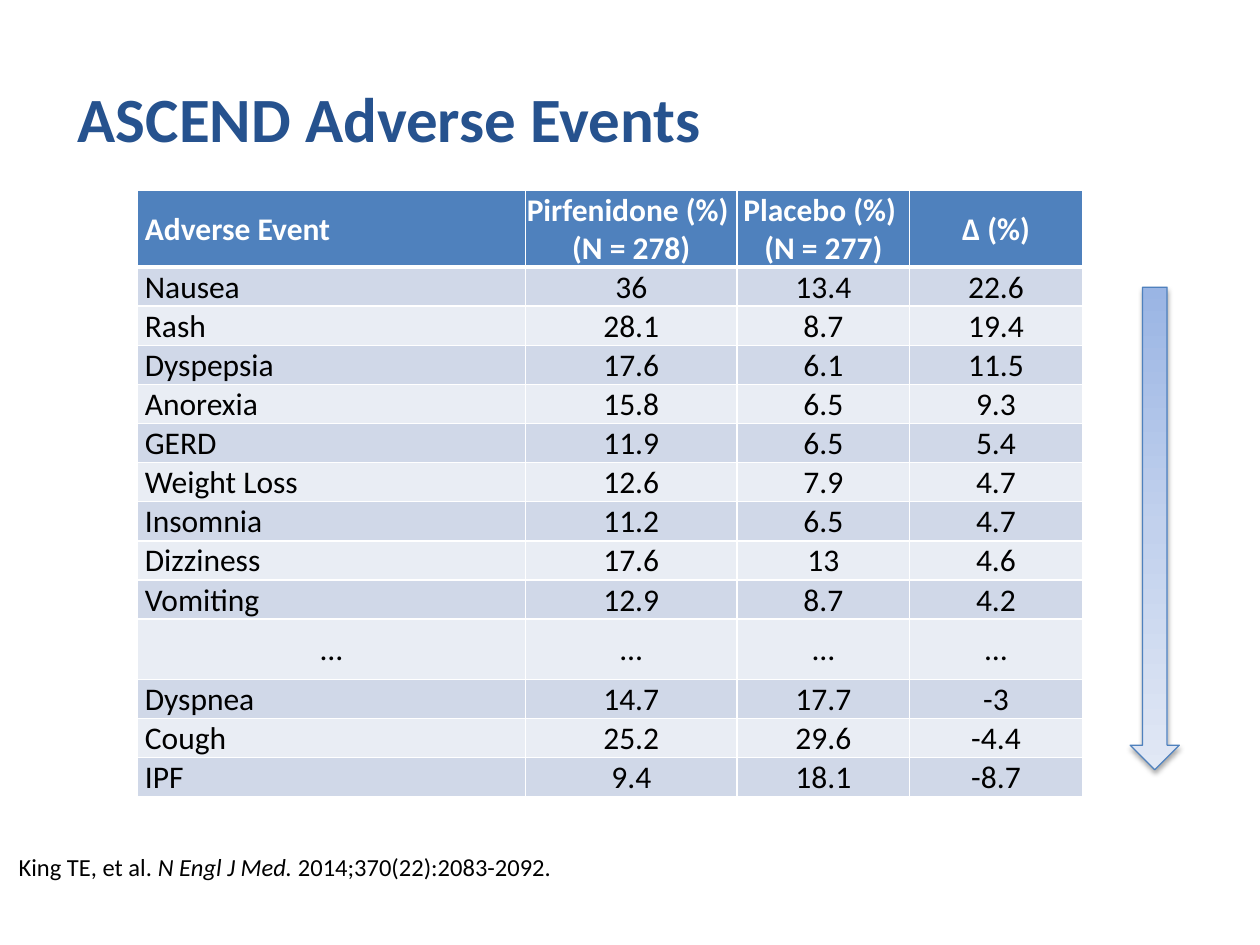
import pptx
import pptx.dml.color
import pptx.enum.shapes
import pptx.enum.text
import pptx.oxml
import pptx.oxml.ns
import pptx.util

ALIGN = pptx.enum.text.PP_ALIGN
ANCHOR = pptx.enum.text.MSO_ANCHOR
COLORS = {
    "title": "26528E", "text": "000000", "white": "FFFFFF", "accent": "4F81BD",
    "odd": "D0D8E8", "even": "E9EDF4",
    "arrow_top": "9AB5E4", "arrow_middle": "C2D1ED", "arrow_bottom": "E1E8F5",
}
HEADINGS = ["Adverse Event", "Pirfenidone (%) \n(N = 278)", "Placebo (%) \n(N = 277)", "Δ (%)"]
EVENTS = [
    ["Nausea", "36", "13.4", "22.6"],
    ["Rash", "28.1", "8.7", "19.4"],
    ["Dyspepsia", "17.6", "6.1", "11.5"],
    ["Anorexia", "15.8", "6.5", "9.3"],
    ["GERD", "11.9", "6.5", "5.4"],
    ["Weight Loss", "12.6", "7.9", "4.7"],
    ["Insomnia", "11.2", "6.5", "4.7"],
    ["Dizziness", "17.6", "13", "4.6"],
    ["Vomiting", "12.9", "8.7", "4.2"],
    ["…"] * 4,
    ["Dyspnea", "14.7", "17.7", "-3"],
    ["Cough", "25.2", "29.6", "-4.4"],
    ["IPF", "9.4", "18.1", "-8.7"],
]


def color(name):
    return pptx.dml.color.RGBColor.from_string(COLORS[name])


def apply(target, values):
    for name, value in values.items():
        setattr(target, name, value)


def element(xml):
    return pptx.oxml.parse_xml(xml.replace(">", f" {pptx.oxml.ns.nsdecls('a')}>", 1))


class SlideBuilder:
    font_name = "Calibri"
    columns, rows = 40, 30

    def __init__(self, presentation):
        self.column = presentation.slide_width / self.columns
        self.row = presentation.slide_height / self.rows
        self.slide = presentation.slides.add_slide(presentation.slide_layouts[6])

    def place(self, left, top, width, height):
        return [int(left * self.column), int(top * self.row),
                int(width * self.column), int(height * self.row)]

    def style(self, font, size, color_name, **values):
        apply(font, {"name": self.font_name, "size": pptx.util.Pt(size), **values})
        font.color.rgb = color(color_name)

    def text(self, place, runs, size, color_name, frame_values, **font_values):
        frame = self.slide.shapes.add_textbox(*self.place(*place)).text_frame
        apply(frame, {"word_wrap": True, **frame_values})
        for words, italic in runs:
            run = frame.paragraphs[0].add_run()
            run.text = words
            self.style(run.font, size, color_name, italic=italic, **font_values)

    def border(self, cell, side, width):
        cell._tc.get_or_add_tcPr().append(element(
            f'<a:{side} w="{int(pptx.util.Pt(width))}"><a:solidFill>'
            f'<a:srgbClr val="{COLORS["white"]}"/></a:solidFill></a:{side}>'))

    def cell(self, cell, words, row, column):
        header, gap = row == 0, words == "…"
        label = column == 0 and not gap
        middle = gap or (header and "\n" not in words)
        margin = pptx.util.Inches(0.01)
        apply(cell, {
            "text": words,
            "margin_left": pptx.util.Inches(0.06) if label else margin,
            "margin_right": margin, "margin_top": margin, "margin_bottom": 0,
            "vertical_anchor": ANCHOR.MIDDLE if middle else ANCHOR.BOTTOM,
        })
        widths = {"lnL": 1, "lnR": 1, "lnT": 3 if row == 1 else 1, "lnB": 3 if header else 1}
        for side, width in widths.items():
            self.border(cell, side, width)
        cell.fill.solid()
        cell.fill.fore_color.rgb = color("accent" if header else "odd" if row % 2 else "even")
        for paragraph in cell.text_frame.paragraphs:
            paragraph.alignment = ALIGN.LEFT if label else ALIGN.CENTER
            for run in paragraph.runs:
                self.style(run.font, 18, "white" if header else "text", bold=header)

    def table(self, left, top, widths, heights, records):
        place = self.place(left, top, sum(widths), sum(heights))
        table = self.slide.shapes.add_table(len(heights), len(widths), *place).table
        for column, width in zip(table.columns, widths):
            column.width = int(width * self.column)
        for row, height in zip(table.rows, heights):
            row.height = int(height * self.row)
        for row, record in enumerate(records):
            for column, words in enumerate(record):
                self.cell(table.cell(row, column), words, row, column)

    def down_arrow(self, place, stops, line_name):
        kind = pptx.enum.shapes.MSO_SHAPE.DOWN_ARROW
        shape = self.slide.shapes.add_shape(kind, *self.place(*place))
        shape.line.color.rgb = color(line_name)
        shape.line.width = pptx.util.Pt(0.75)
        shape.fill.gradient()
        shape.fill.gradient_angle = 270
        properties = shape._element.spPr
        stop_list = properties.find(".//" + pptx.oxml.ns.qn("a:gsLst"))
        for stop in list(stop_list):
            stop_list.remove(stop)
        for position, name in stops.items():
            stop_list.append(element(f'<a:gs pos="{position * 1000}">'
                                     f'<a:srgbClr val="{COLORS[name]}"/></a:gs>'))
        shape.shadow.inherit = False
        properties.find(pptx.oxml.ns.qn("a:effectLst")).append(element(
            f'<a:outerShdw blurRad="{int(pptx.util.Pt(3.1))}" dist="{int(pptx.util.Pt(1.8))}" '
            f'dir="5400000" rotWithShape="0"><a:srgbClr val="{COLORS["text"]}">'
            '<a:alpha val="35000"/></a:srgbClr></a:outerShdw>'))


def main():
    presentation = pptx.Presentation()
    presentation.slide_width = pptx.util.Inches(10)
    presentation.slide_height = pptx.util.Inches(7.5)
    builder = SlideBuilder(presentation)
    builder.text((0.2, 26.84, 21.32, 1.36),
                 [("King TE, et al. ", False), ("N Engl J Med. ", True),
                  ("2014;370(22):2083-2092.", False)], 14, "text",
                 {"auto_size": pptx.enum.text.MSO_AUTO_SIZE.SHAPE_TO_FIT_TEXT})
    builder.text((2.08, 1.92, 36, 3.6), [("ASCEND Adverse Events", False)], 36, "title",
                 {"vertical_anchor": ANCHOR.MIDDLE}, bold=True)
    heights = [2.44] + [1.92 if record[0] == "…" else 1.24 for record in EVENTS]
    builder.table(4.36, 6.04, [12.32, 6.72, 5.48, 5.48], heights, [HEADINGS] + EVENTS)
    builder.down_arrow((35.88, 9.12, 1.56, 15.32),
                       {0: "arrow_top", 50: "arrow_middle", 100: "arrow_bottom"}, "accent")
    presentation.save("out.pptx")


if __name__ == "__main__":
    main()
